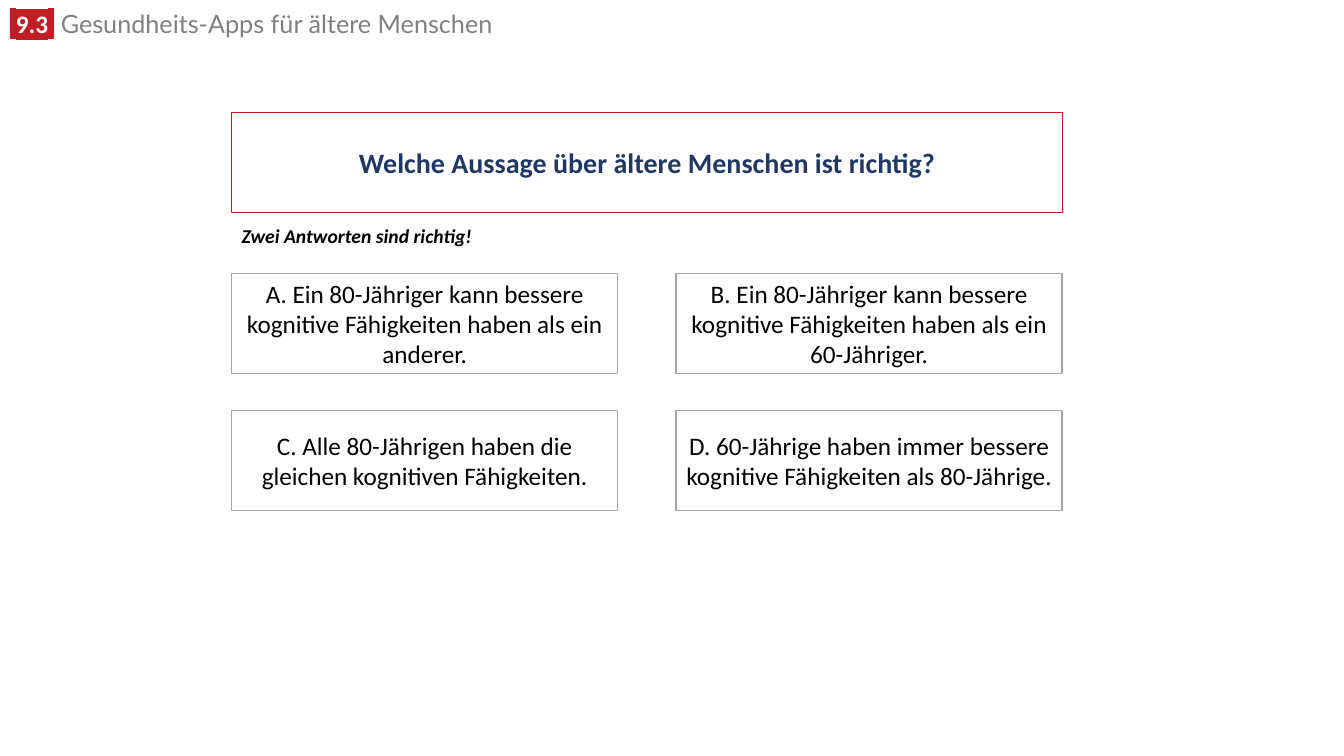
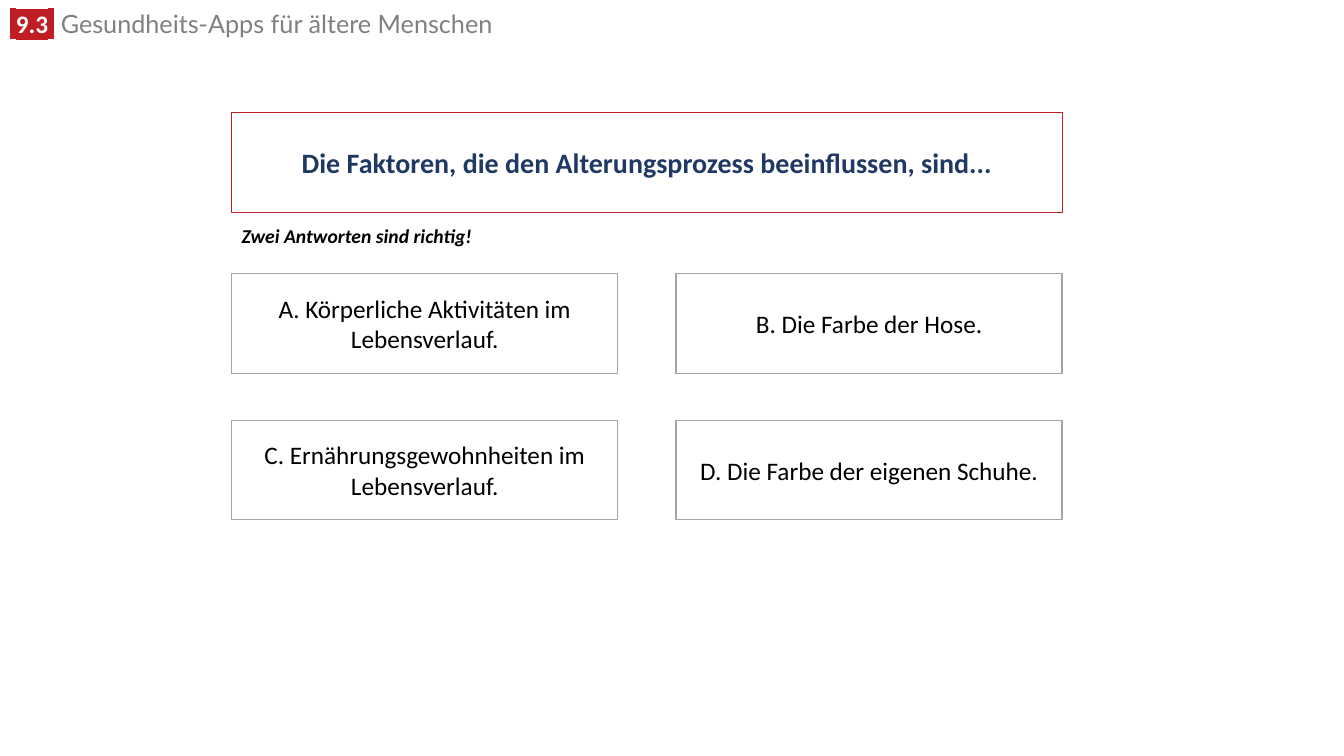
from lxml.etree import Element, SubElement
from pptx import Presentation
from pptx.dml.color import RGBColor
from pptx.enum.shapes import MSO_SHAPE
from pptx.enum.text import MSO_ANCHOR, MSO_AUTO_SIZE, PP_ALIGN
from pptx.oxml.ns import qn
from pptx.util import Cm, Pt

RED = RGBColor(0xC0, 0x1E, 0x24)
NAVY = RGBColor(0x20, 0x38, 0x64)
GREY = RGBColor(0x80, 0x80, 0x80)
BORDER_GREY = RGBColor(0xA5, 0xA5, 0xA5)
WHITE = RGBColor(0xFF, 0xFF, 0xFF)
BLACK = RGBColor(0, 0, 0)

QUIZ_LEFT, QUIZ_WIDTH = Cm(5.84), Cm(20.93)
QUESTION_TOP, BOX_HEIGHT = Cm(2.84), Cm(2.51)
ANSWERS_TOP, ANSWER_WIDTH = Cm(6.9), Cm(9.73)

QUIZZES = [
    ("Welche Aussage über ältere Menschen ist richtig?", Cm(0.94), [
        "A. Ein 80-Jähriger kann bessere kognitive Fähigkeiten haben als ein anderer.",
        "B. Ein 80-Jähriger kann bessere kognitive Fähigkeiten haben als ein 60-Jähriger.",
        "C. Alle 80-Jährigen haben die gleichen kognitiven Fähigkeiten.",
        "D. 60-Jährige haben immer bessere kognitive Fähigkeiten als 80-Jährige.",
    ]),
    ("Die Faktoren, die den Alterungsprozess beeinflussen, sind...", Cm(1.18), [
        "A. Körperliche Aktivitäten im Lebensverlauf.",
        "B. Die Farbe der Hose.",
        "C. Ernährungsgewohnheiten im Lebensverlauf.",
        "D. Die Farbe der eigenen Schuhe.",
    ]),
]


def add_text(paragraph, text, size=18, color=BLACK, font="Calibri",
             bold=False, italic=False, highlight=None):
    """Append one formatted run."""
    run = paragraph.add_run()
    run.text = text
    run.font.size, run.font.name = Pt(size), font
    run.font.bold, run.font.italic = bold, italic
    run.font.color.rgb = color
    if highlight is not None:
        mark = Element(qn("a:highlight"))
        SubElement(mark, qn("a:srgbClr")).set("val", str(highlight))
        run.font.fill  # colour is already set, so the fill element exists
        run._r.rPr.find(qn("a:solidFill")).addnext(mark)


def place(shape, left, top, width, height):
    shape.left, shape.top, shape.width, shape.height = left, top, width, height


def style_box(shape, border):
    """White box with a thin border and centred text."""
    shape.fill.solid()
    shape.fill.fore_color.rgb = WHITE
    shape.line.color.rgb = border
    shape.line.width = Pt(1)
    frame = shape.text_frame
    frame.word_wrap = True
    frame.auto_size = MSO_AUTO_SIZE.NONE
    frame.vertical_anchor = MSO_ANCHOR.MIDDLE
    frame.paragraphs[0].alignment = PP_ALIGN.CENTER
    return frame.paragraphs[0]


def add_chapter_header(slide, layout):
    """Build the chapter line and move it to the layout all slides share."""
    header = slide.shapes.add_textbox(0, Cm(0.23), Cm(24.18), Cm(0.89))
    header.text_frame.word_wrap = True
    line = header.text_frame.paragraphs[0]
    line.line_spacing = 0.8
    for text, font in ((" ", "Lato"), ("9.3", "Calibri"), (" ", "Lato")):
        add_text(line, text, font=font, color=WHITE, bold=True, highlight=RED)
    add_text(line, " Gesundheits-Apps für ältere Menschen", font="Lato", color=GREY)
    layout.shapes.element.append(header.element)


def add_question(slide, text, left, top, width, height):
    """Title in a rounded frame."""
    title = slide.shapes.title
    place(title, left, top, width, height)
    outline = Element(qn("a:prstGeom"), prst="roundRect")
    SubElement(outline, qn("a:avLst"))
    title.element.spPr.find(qn("a:xfrm")).addnext(outline)
    add_text(style_box(title, RED), text, size=20, color=NAVY, bold=True)


def add_hint(slide, left, top):
    hint = slide.shapes.add_textbox(left, top, Cm(6.35), Cm(0.86))
    hint.text_frame.word_wrap = False
    add_text(hint.text_frame.paragraphs[0], "Zwei Antworten sind richtig!",
             size=14, bold=True, italic=True)


def add_answers(slide, answers, left, top, width, row_gap):
    """Two-column grid that fills the given width."""
    for index, answer in enumerate(answers):
        row, column = divmod(index, 2)
        box = slide.shapes.add_shape(
            MSO_SHAPE.RECTANGLE,
            left + column * (width - ANSWER_WIDTH),
            top + row * (BOX_HEIGHT + row_gap),
            ANSWER_WIDTH, BOX_HEIGHT)
        box.shadow.inherit = False
        add_text(style_box(box, BORDER_GREY), answer)


def add_quiz_slide(slide, question, row_gap, answers):
    add_question(slide, question, QUIZ_LEFT, QUESTION_TOP, QUIZ_WIDTH, BOX_HEIGHT)
    add_hint(slide, QUIZ_LEFT, QUESTION_TOP + BOX_HEIGHT + Cm(0.16))
    add_answers(slide, answers, QUIZ_LEFT, ANSWERS_TOP, QUIZ_WIDTH, row_gap)


def main():
    presentation = Presentation()
    presentation.slide_width, presentation.slide_height = Cm(33.87), Cm(19.05)
    layout = presentation.slide_layouts.get_by_name("Title Only")
    slides = [presentation.slides.add_slide(layout) for _ in QUIZZES]
    add_chapter_header(slides[0], layout)
    for slide, quiz in zip(slides, QUIZZES):
        add_quiz_slide(slide, *quiz)
    presentation.save("out.pptx")


if __name__ == "__main__":
    main()
